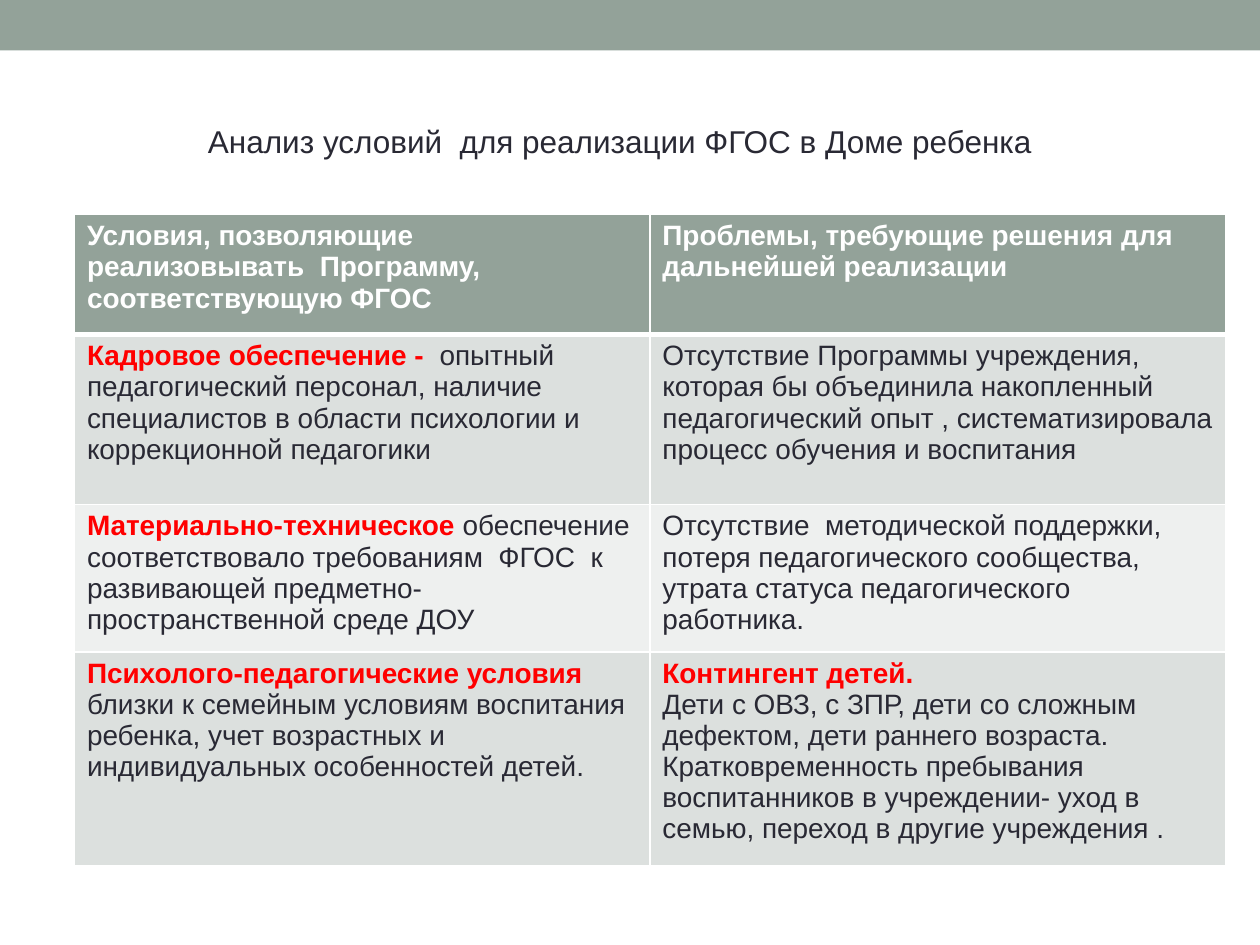
from lxml import etree
from pptx import Presentation
from pptx import util as u
from pptx.dml import color
from pptx.enum import shapes, text
from pptx.oxml import ns

COLORS = {
    "sage": "93A299", "band_dark": "DCE0DE", "band_light": "EEF0EF",
    "ink": "292934", "accent": "FF0000", "white": "FFFFFF",
}
FONT = "Arial"
TITLE = "Анализ условий  для реализации ФГОС в Доме ребенка"
HEADINGS = [
    "Условия, позволяющие реализовывать  Программу,  соответствующую ФГОС",
    "Проблемы, требующие решения для дальнейшей реализации",
]
# Each cell is a list of paragraphs: (red lead, plain text)
ROWS = [
    [
        [("Кадровое обеспечение -  ",
          "опытный педагогический персонал, наличие специалистов "
          "в области психологии и коррекционной педагогики")],
        [("", "Отсутствие Программы учреждения, которая бы объединила "
              "накопленный педагогический опыт , систематизировала "
              "процесс обучения и воспитания")],
    ],
    [
        [("Материально-техническое ",
          "обеспечение соответствовало требованиям  ФГОС  к развивающей "
          "предметно-пространственной среде ДОУ")],
        [("", "Отсутствие  методической поддержки, потеря педагогического "
              "сообщества, утрата статуса педагогического работника.")],
    ],
    [
        [("Психолого-педагогические условия ",
          "близки к семейным условиям воспитания ребенка, учет возрастных "
          "и индивидуальных особенностей детей.")],
        [("Контингент детей.", ""),
         ("", "Дети с ОВЗ, с ЗПР, дети со сложным дефектом, "
              "дети раннего возраста."),
         ("", "Кратковременность пребывания воспитанников в учреждении- "
              "уход в семью, переход в другие учреждения .")],
    ],
]
ROW_HEIGHTS = [2.42, 3.43, 2.97, 4.32]


def rgb(name):
    return color.RGBColor.from_string(COLORS[name])


def style_font(font, size, ink, bold=False):
    font.name, font.size, font.bold = FONT, u.Pt(size), bold
    font.color.rgb = rgb(ink)


def add_band(page, left, top, width, height):
    band = page.shapes.add_shape(
        shapes.MSO_SHAPE.RECTANGLE, left, top, width, height)
    band.shadow.inherit = False
    band.fill.solid()
    band.fill.fore_color.rgb = rgb("sage")
    band.line.fill.background()


def add_title(page, left, top, width, height):
    box = page.shapes.add_textbox(left, top, width, height)
    box.text_frame.word_wrap = True
    para = box.text_frame.paragraphs[0]
    para.text = TITLE
    para.alignment = text.PP_ALIGN.CENTER
    style_font(para.font, 18, "ink")


def style_cell(cell, fill, bottom_width=1):
    """Give the cell white borders and a solid fill."""
    properties = cell._tc.get_or_add_tcPr()
    for side, width in zip("LRTB", (1, 1, 1, bottom_width)):
        line = etree.SubElement(
            properties, ns.qn(f"a:ln{side}"), w=str(u.Pt(width)))
        solid = etree.SubElement(line, ns.qn("a:solidFill"))
        etree.SubElement(solid, ns.qn("a:srgbClr"), val=COLORS["white"])
    cell.fill.solid()
    cell.fill.fore_color.rgb = rgb(fill)


def fill_cell(cell, paragraphs):
    frame = cell.text_frame
    for index, (lead, body) in enumerate(paragraphs):
        para = frame.add_paragraph() if index else frame.paragraphs[0]
        for words, ink, bold in ((lead, "accent", True), (body, "ink", False)):
            if words:
                span = para.add_run()
                span.text = words
                style_font(span.font, 16, ink, bold)


def add_analysis_table(page, left, top, width, height):
    table = page.shapes.add_table(
        len(ROWS) + 1, len(HEADINGS), left, top, width, height).table
    for column in table.columns:
        column.width = width // len(HEADINGS)
    for row, share in zip(table.rows, ROW_HEIGHTS):
        row.height = int(height * share / sum(ROW_HEIGHTS))

    for column, heading in enumerate(HEADINGS):
        cell = table.cell(0, column)
        style_cell(cell, "sage", bottom_width=3)
        para = cell.text_frame.paragraphs[0]
        para.text = heading
        style_font(para.font, 16, "white", True)
    for number, contents in enumerate(ROWS, start=1):
        for column, paragraphs in enumerate(contents):
            cell = table.cell(number, column)
            style_cell(cell, "band_dark" if number % 2 else "band_light")
            if number == 1:
                top_line = cell._tc.tcPr.find(ns.qn("a:lnT"))
                top_line.set("w", str(u.Pt(3)))
            fill_cell(cell, paragraphs)


def main():
    deck = Presentation()
    deck.slide_width, deck.slide_height = u.Cm(25.4), u.Cm(19.05)
    page = deck.slides.add_slide(deck.slide_layouts[6])
    add_band(page, 0, 0, deck.slide_width, u.Cm(1.02))
    add_analysis_table(
        page, u.Cm(1.5), u.Cm(4.32), u.Cm(23.2), u.Cm(sum(ROW_HEIGHTS)))
    add_title(page, u.Cm(1.9), u.Cm(2.34), u.Cm(21.2), u.Cm(1.02))
    deck.save("out.pptx")


if __name__ == "__main__":
    main()
